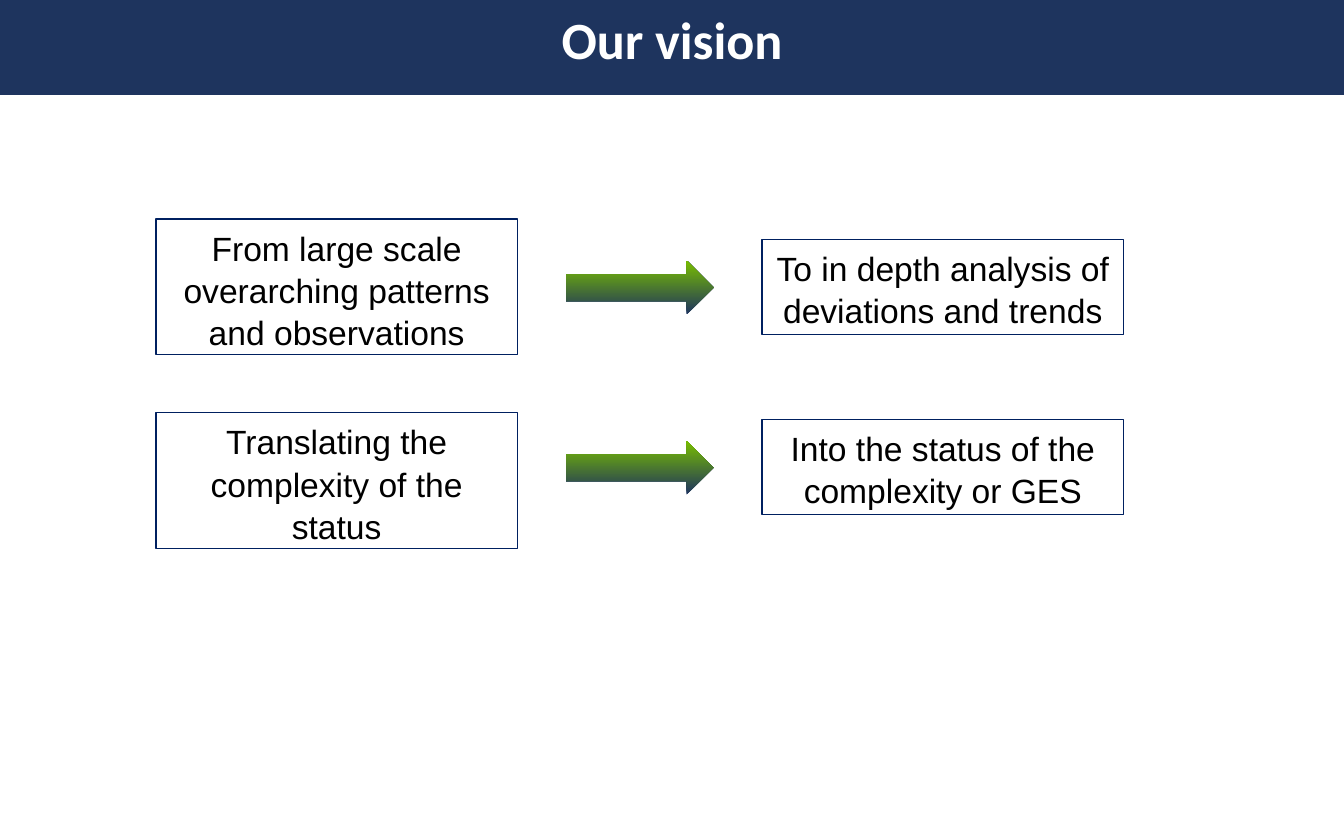
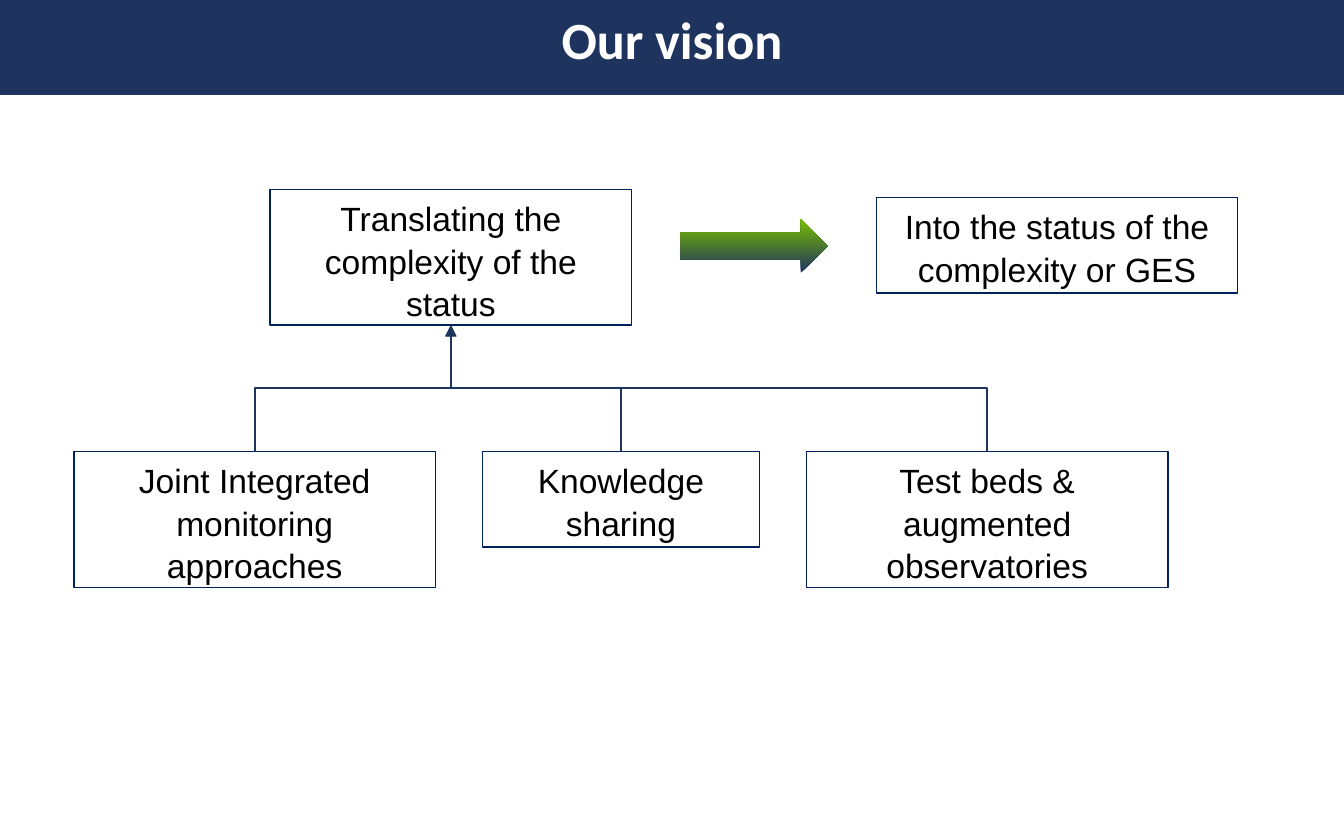
"""Build two vision slides with paired boxes, gradient arrows and a tree of inputs."""
from lxml import etree
from pptx import Presentation
from pptx import util as u
from pptx.dml import color
from pptx.enum import shapes, text
from pptx.oxml import ns

COLOURS = {"band": "1E345E", "outline": "002060", "arrow": "78BD00", "text": "000000", "title": "FFFFFF"}
FONTS = {
    "title": {"name": "Calibri", "size": u.Pt(28), "bold": True},
    "text": {"name": "Arial", "size": u.Pt(18), "bold": False},
}
FRAMES = {
    "title": {"word_wrap": True, "vertical_anchor": text.MSO_ANCHOR.MIDDLE,
              "auto_size": text.MSO_AUTO_SIZE.SHAPE_TO_FIT_TEXT},
    "text": {"word_wrap": True, "vertical_anchor": text.MSO_ANCHOR.TOP,
             "auto_size": text.MSO_AUTO_SIZE.SHAPE_TO_FIT_TEXT},
}
PARAGRAPHS = {
    "title": {"alignment": text.PP_ALIGN.CENTER},
    "text": {"alignment": text.PP_ALIGN.CENTER, "line_spacing": 1.05},
}
BOX_WIDTH, TALL, SHORT = 2.69, 1.01, 0.71
ARROW_OFFSET, RESULT_OFFSET = 3.05, 4.51


def rgb(name):
    return color.RGBColor.from_string(COLOURS[name])


def apply(target, values):
    for name, value in values.items():
        setattr(target, name, value)


class Deck:
    def __init__(self):
        self.presentation = Presentation()
        apply(self.presentation, {"slide_width": u.Inches(10), "slide_height": u.Inches(6.25)})
        self.slide = None

    def add_slide(self, heading):
        self.slide = self.presentation.slides.add_slide(self.presentation.slide_layouts[5])
        title = self.slide.shapes.title
        apply(title, {"left": u.Inches(0), "top": u.Inches(0),
                      "width": u.Inches(10), "height": u.Inches(0.57)})
        title.fill.solid()
        title.fill.fore_color.rgb = rgb("band")
        self.outline(title, "band", 0.75)
        self.label(title, heading, "title")

    def outline(self, shape, colour, width):
        shape.line.color.rgb = rgb(colour)
        shape.line.width = u.Pt(width)

    def label(self, shape, words, style):
        frame = shape.text_frame
        frame.text = words
        apply(frame, FRAMES[style])
        paragraph = frame.paragraphs[0]
        apply(paragraph, PARAGRAPHS[style])
        font = paragraph.runs[0].font
        apply(font, FONTS[style])
        font.color.rgb = rgb(style)

    def shape(self, kind, *place):
        shape = self.slide.shapes.add_shape(kind, *map(u.Inches, place))
        shape.shadow.inherit = False
        return shape

    def box(self, words, left, top, width=BOX_WIDTH, height=TALL):
        box = self.shape(shapes.MSO_SHAPE.RECTANGLE, left, top, width, height)
        box.fill.background()
        self.outline(box, "outline", 0.75)
        self.label(box, words, "text")
        return box

    def arrow(self, left, top):
        arrow = self.shape(shapes.MSO_SHAPE.RIGHT_ARROW, left, top, 1.1, 0.4)
        arrow.line.fill.background()
        arrow.fill.gradient()
        arrow.fill.gradient_angle = 90
        for stop, position, name in zip(arrow.fill.gradient_stops, (0, 1), ("band", "arrow")):
            stop.position = position
            stop.color.rgb = rgb(name)

    def pair(self, start, result, left, top, drop):
        source = self.box(start, left, top)
        self.box(result, left + RESULT_OFFSET, top + drop, height=SHORT)
        self.arrow(left + ARROW_OFFSET, top + drop + 0.16)
        return source

    def branch(self, child, parent):
        connector = self.slide.shapes.add_connector(shapes.MSO_CONNECTOR.ELBOW, 0, 0, 0, 0)
        connector.begin_connect(child, 0)
        connector.end_connect(parent, 2)
        start_x = child.left + child.width // 2
        end_x = parent.left + parent.width // 2
        end_y = parent.top + parent.height
        rise, run = child.top - end_y, abs(end_x - start_x)
        apply(connector, {"left": (start_x + end_x - rise) // 2, "top": (child.top + end_y - run) // 2,
                          "width": rise, "height": run})
        properties = connector.element.spPr
        transform = properties.find(ns.qn("a:xfrm"))
        transform.attrib.clear()
        transform.set("rot", str(270 * 60000))
        if start_x > end_x:
            transform.set("flipV", "1")
        self.outline(connector, "band", 1)
        line = properties.find(ns.qn("a:ln"))
        etree.SubElement(line, ns.qn("a:tailEnd"), type="triangle")
        etree.SubElement(properties, ns.qn("a:effectLst"))


def main():
    deck = Deck()
    heading = "Our vision"
    status = ("Translating the complexity of the status", "Into the status of the complexity or GES")

    deck.add_slide(heading)
    deck.pair("From large scale overarching patterns and observations",
              "To in depth analysis of deviations and trends", 1.16, 1.63, 0.15)
    deck.pair(*status, 1.16, 3.07, 0.05)

    deck.add_slide(heading)
    goal = deck.pair(*status, 2.01, 1.41, 0.06)
    inputs = [
        ("Joint Integrated monitoring approaches", BOX_WIDTH, TALL),
        ("Knowledge sharing", 2.06, SHORT),
        ("Test beds & augmented observatories", BOX_WIDTH, TALL),
    ]
    left, gap = 0.55, 0.35
    for words, width, height in inputs:
        deck.branch(deck.box(words, left, 3.36, width, height), goal)
        left += width + gap

    deck.presentation.save("out.pptx")


if __name__ == "__main__":
    main()
